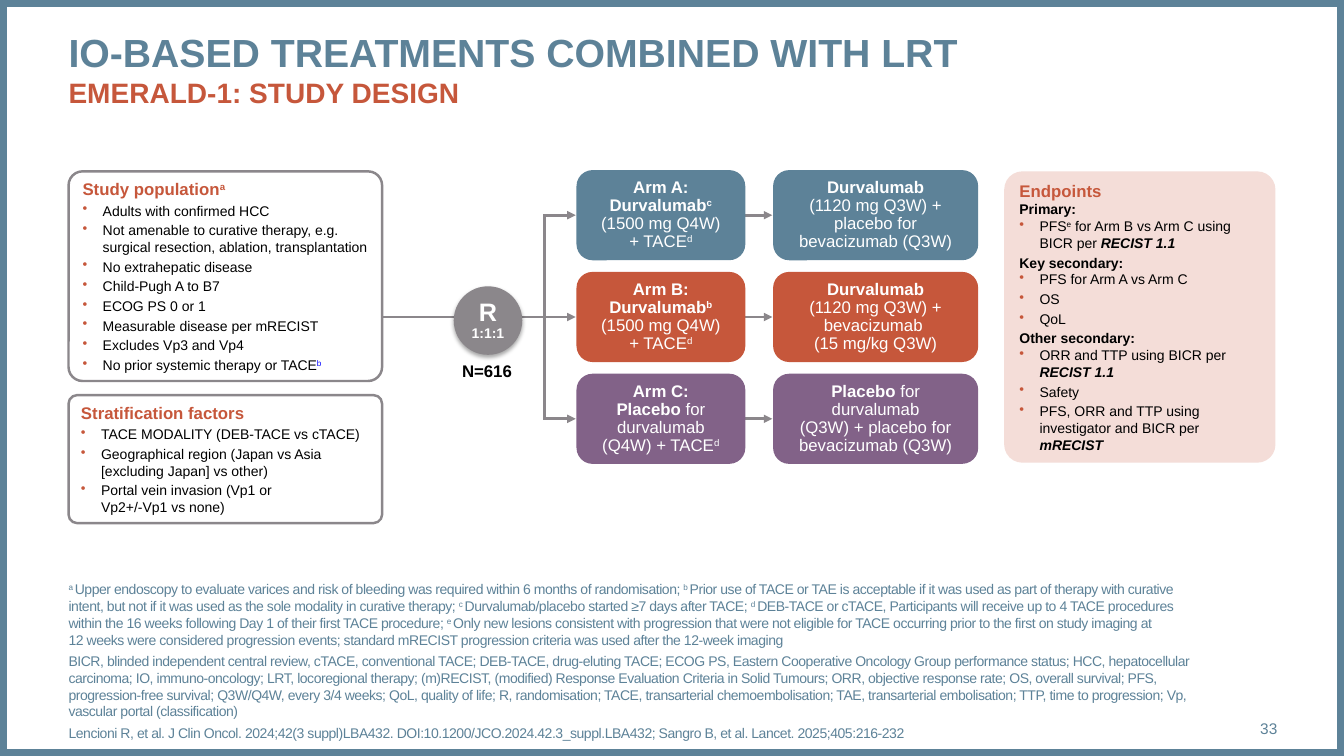
"""Build the EMERALD-1 study design slide."""
from copy import deepcopy
from dataclasses import dataclass

from lxml import etree
from pptx import Presentation
from pptx.dml.color import RGBColor
from pptx.enum import shapes, text
from pptx.oxml import ns
from pptx.util import Inches, Pt


@dataclass(frozen=True)
class Theme:
    font: str = "Arial"
    blue: str = "5D8298"
    rust: str = "C6573B"
    purple: str = "826288"
    gray: str = "8B878B"
    pink: str = "F4DDD8"
    link: str = "0000FF"
    white: str = "FFFFFF"
    black: str = "000000"
    title: float = 28
    subtitle: float = 20
    randomise: float = 18
    head: float = 12
    page: float = 11
    small: float = 10


T = Theme()
MID, TOP, BOTTOM = text.MSO_ANCHOR.MIDDLE, text.MSO_ANCHOR.TOP, text.MSO_ANCHOR.BOTTOM
LEFT, CENTER, RIGHT = text.PP_ALIGN.LEFT, text.PP_ALIGN.CENTER, text.PP_ALIGN.RIGHT

# Run flags: b bold, i italic, s superscript, l link colour
TITLE = ("IO-BASED TREATMENTS COMBINED WITH LRT\n", "EMERALD-1: STUDY DESIGN")
POPULATION = [
    ("head", ["Study population", ("a", "s")]),
    ("item", ["Adults with confirmed HCC"]),
    ("item", ["Not amenable to curative therapy, e.g. surgical resection, ablation, transplantation"]),
    ("item", ["No extrahepatic disease"]),
    ("item", ["Child-Pugh A to B7"]),
    ("item", ["ECOG PS 0 or 1"]),
    ("item", ["Measurable disease per mRECIST"]),
    ("item", ["Excludes Vp3 and Vp4"]),
    ("item", ["No prior systemic therapy or TACE", ("b", "sl")]),
]
STRATIFICATION = [
    ("head", ["Stratification factors"]),
    ("item", ["TACE MODALITY (DEB-TACE vs cTACE)"]),
    ("item", ["Geographical region (Japan vs Asia\n[excluding Japan] vs other)"]),
    ("item", ["Portal vein invasion (Vp1 or \nVp2+/-Vp1 vs none)"]),
]
ENDPOINTS = [
    ("tight", ["Endpoints"]),
    ("label", ["Primary:"]),
    ("item", ["PFS", ("e", "s"), " for Arm B vs Arm C using BICR per ", ("RECIST 1.1", "bi")]),
    ("label", ["Key secondary:"]),
    ("item", ["PFS for Arm A vs Arm C"]),
    ("item", ["OS"]),
    ("item", ["QoL"]),
    ("label", ["Other secondary:"]),
    ("item", ["ORR and TTP using BICR per ", ("RECIST 1.1", "bi")]),
    ("item", ["Safety"]),
    ("item", ["PFS, ORR and TTP using investigator and BICR per ", ("mRECIST", "bi")]),
]
DOSE = ["(1500 mg Q4W)\n+ TACE", ("d", "s")]
ARMS = [
    (T.blue, [[("Arm A:\nDurvalumab", "b"), ("c", "bs")], DOSE],
     [[("Durvalumab", "b")], ["(1120 mg Q3W) + placebo for bevacizumab (Q3W)"]]),
    (T.rust, [[("Arm B:\nDurvalumab", "b"), ("b", "bs")], DOSE],
     [[("Durvalumab", "b")], ["(1120 mg Q3W) + bevacizumab \n(15 mg/kg Q3W)"]]),
    (T.purple, [[("Arm C:\nPlacebo ", "b"), "for"], ["durvalumab (Q4W) + TACE", ("d", "s")]],
     [[("Placebo ", "b"), "for durvalumab"], ["(Q3W) + placebo for bevacizumab (Q3W)"]]),
]
FOOTNOTES = [
    [("a ", "s"), "Upper endoscopy to evaluate varices and risk of bleeding was required within 6 months of randomisation; ",
     ("b ", "s"), "Prior use of TACE or TAE is acceptable if it was used as part of therapy with curative intent, but not if it was used as the sole modality in curative therapy; ",
     ("c ", "s"), "Durvalumab/placebo started ≥7 days after TACE; ",
     ("d ", "s"), "DEB-TACE or cTACE, Participants will receive up to 4 TACE procedures within the 16 weeks following Day 1 of their first TACE procedure; ",
     ("e ", "s"), "Only new lesions consistent with progression that were not eligible for TACE occurring prior to the first on study imaging at \n12 weeks were considered progression events; standard mRECIST progression criteria was used after the 12-week imaging"],
    ["BICR, blinded independent central review, cTACE, conventional TACE; DEB-TACE, drug-eluting TACE; ECOG PS, Eastern Cooperative Oncology Group performance status; HCC, hepatocellular carcinoma; IO, immuno-oncology; LRT, locoregional therapy; (m)RECIST, (modified) Response Evaluation Criteria in Solid Tumours; ORR, objective response rate; OS, overall survival; PFS, progression-free survival; Q3W/Q4W, every 3/4 weeks; QoL, quality of life; R, randomisation; TACE, transarterial chemoembolisation; TAE, transarterial embolisation; TTP, time to progression; Vp, vascular portal (classification)"],
    ["Lencioni R, et al. J Clin Oncol. 2024;42(3 suppl)LBA432. DOI:10.1200/JCO.2024.42.3_suppl.LBA432; Sangro B, et al. Lancet. 2025;405:216-232"],
]

# Paragraph kinds: size, colour, base flags, space after, bulleted
KINDS = {
    "head": (T.head, T.rust, "b", 2, False),
    "tight": (T.head, T.rust, "b", 0, False),
    "label": (T.small, T.black, "b", 0, False),
    "item": (T.small, T.black, "", 2, True),
}
MARGIN, TOP_ROW, ROW_STEP, ARM_H = 0.68, 1.7, 1.01, 0.87
PANEL_W, ARM_X, ARM_W, NEXT_X, NEXT_W, TRUNK_X, GAP = 3.11, 5.73, 1.65, 7.68, 2.01, 5.4, 0.02


def sub(parent, tag, **attrs):
    return etree.SubElement(parent, ns.qn(tag), attrs)


def add_runs(p, runs, size, color, base="", spacing=None):
    for run in runs:
        words, flags = (run, base) if isinstance(run, str) else (run[0], run[1] + base)
        for n, part in enumerate(words.split("\n")):
            if n:
                p.add_line_break()
                p._p[-1].append(deepcopy(r._r.rPr))
            if not part:
                continue
            r = p.add_run()
            r.text = part
            f = r.font
            f.name, f.size, f.bold, f.italic = T.font, Pt(size), "b" in flags, "i" in flags
            f.color.rgb = RGBColor.from_string(T.link if "l" in flags else color)
            if "s" in flags:
                r._r.rPr.set("baseline", "30000")
            if spacing:
                r._r.rPr.set("spc", str(spacing))


def set_frame(sp, anchor, insets=None):
    tf = sp.text_frame
    tf.word_wrap, tf.auto_size, tf.vertical_anchor = True, text.MSO_AUTO_SIZE.NONE, anchor
    if insets:
        tf.margin_left, tf.margin_top, tf.margin_right, tf.margin_bottom = map(Inches, insets)
    return tf


def add_paragraph(tf, align=LEFT, line=1, before=0, after=0):
    first = not tf.paragraphs[0].runs
    p = tf.paragraphs[0] if first else tf.add_paragraph()
    p.alignment, p.line_spacing = align, line
    p.space_before, p.space_after = Pt(0 if first else before), Pt(after)
    return p


def place(sp, *box):
    sp.left, sp.top, sp.width, sp.height = map(Inches, box)
    return sp


def add_box(s, kind, box, fill=None, line=None, width=1.75, adj=None):
    sp = s.shapes.add_shape(kind, *map(Inches, box))
    sp.shadow.inherit = False
    for part, color in ((sp.fill, fill), (sp.line.fill, line)):
        if color:
            part.solid()
            part.fore_color.rgb = RGBColor.from_string(color)
        else:
            part.background()
    if line:
        sp.line.width = Pt(width)
    if adj:
        sp.adjustments[0] = adj
    return sp


def add_panel(s, box, paragraphs, fill, line=None):
    tf = set_frame(add_box(s, shapes.MSO_SHAPE.ROUNDED_RECTANGLE, box, fill, line, adj=0.067), MID)
    for kind, runs in paragraphs:
        size, color, base, after, bulleted = KINDS[kind]
        p = add_paragraph(tf, after=after)
        if bulleted:
            pPr = p._p.get_or_add_pPr()
            pPr.set("marL", str(Inches(0.2)))
            pPr.set("indent", str(Inches(-0.2)))
            sub(sub(pPr, "a:buClr"), "a:srgbClr", val=T.rust)
            sub(pPr, "a:buChar", char="•")
        add_runs(p, runs, size, color, base)


def add_line(s, x1, y1, x2, y2, arrow=True):
    c = s.shapes.add_connector(shapes.MSO_CONNECTOR.STRAIGHT, *map(Inches, (x1, y1, x2, y2)))
    c.line.color.rgb, c.line.width = RGBColor.from_string(T.gray), Pt(2)
    if arrow:
        sub(c.line._get_or_add_ln(), "a:tailEnd", type="triangle")
    sub(c._element.spPr, "a:effectLst")


def add_label(s, box, words, size, color, align, anchor, base=""):
    tf = set_frame(s.shapes.add_textbox(*map(Inches, box)), anchor, (0, 0, 0, 0))
    add_runs(add_paragraph(tf, align), [words], size, color, base)


def add_flow(s):
    rows = [TOP_ROW + i * ROW_STEP for i in range(len(ARMS))]
    mids = [y + ARM_H / 2 for y in rows]
    add_line(s, TRUNK_X, mids[0] - GAP / 2, TRUNK_X, mids[-1] + GAP / 2, arrow=False)
    for i, mid in enumerate(mids):
        add_line(s, MARGIN + PANEL_W if i == 1 else TRUNK_X, mid, ARM_X - GAP, mid)
        add_line(s, ARM_X + ARM_W, mid, NEXT_X - GAP, mid)
    for y, (color, first, second) in zip(rows, ARMS):
        for x, w, paragraphs in ((ARM_X, ARM_W, first), (NEXT_X, NEXT_W, second)):
            sp = add_box(s, shapes.MSO_SHAPE.ROUNDED_RECTANGLE, (x, y, w, ARM_H), color, color, adj=0.169)
            tf = set_frame(sp, MID)
            for runs in paragraphs:
                add_runs(add_paragraph(tf, CENTER, 0.9), runs, T.head, T.white)
    sp = add_box(s, shapes.MSO_SHAPE.OVAL, (4.5, 2.84, 0.68, 0.68), T.gray)
    shadow = sub(sp._element.spPr.find(ns.qn("a:effectLst")), "a:outerShdw", blurRad=str(Pt(3.1)),
                 dist=str(Pt(1.8)), dir="5400000", algn="ctr", rotWithShape="0")
    sub(sub(shadow, "a:srgbClr", val=T.black), "a:alpha", val="35000")
    p = add_paragraph(set_frame(sp, MID, (0, 0.05, 0, 0.05)), CENTER, 0.9)
    add_runs(p, ["R\n"], T.randomise, T.white, "b")
    add_runs(p, ["1:1:1"], T.small, T.white, "b")
    add_label(s, (4.34, 3.58, 0.98, 0.2), "N=616", T.head, T.black, CENTER, TOP, "b")


def main():
    prs = Presentation()
    prs.slide_width, prs.slide_height = Inches(13.33), Inches(7.5)
    s = prs.slides.add_slide(prs.slide_layouts[1])
    add_box(s, shapes.MSO_SHAPE.RECTANGLE, (0, 0, 13.33, 7.5), line=T.blue, width=10)
    p = add_paragraph(set_frame(place(s.shapes.title, MARGIN, 0.28, 11.99, 0.94), TOP, (0, 0, 0, 0)))
    add_runs(p, TITLE[:1], T.title, T.blue, "b")
    add_runs(p, TITLE[1:], T.subtitle, T.rust, "b")
    tf = set_frame(place(s.placeholders[1], MARGIN, 5.75, 11.13, 1.6), BOTTOM, (0, 0, 0, 0))
    for runs in FOOTNOTES:
        p = add_paragraph(tf, before=3)
        pPr = p._p.get_or_add_pPr()
        pPr.set("marL", "0")
        pPr.set("indent", "0")
        sub(pPr, "a:buNone")
        add_runs(p, runs, T.small, T.blue, spacing=-30)
    add_label(s, (11.81, 7.03, 0.86, 0.4), "33", T.page, T.blue, RIGHT, MID)
    add_flow(s)
    add_panel(s, (MARGIN, TOP_ROW, PANEL_W, 2.08), POPULATION, T.white, T.gray)
    add_panel(s, (MARGIN, 3.92, PANEL_W, 1.27), STRATIFICATION, T.white, T.gray)
    add_panel(s, (9.96, TOP_ROW, 2.69, 2.89), ENDPOINTS, T.pink)
    prs.save("out.pptx")


if __name__ == "__main__":
    main()
